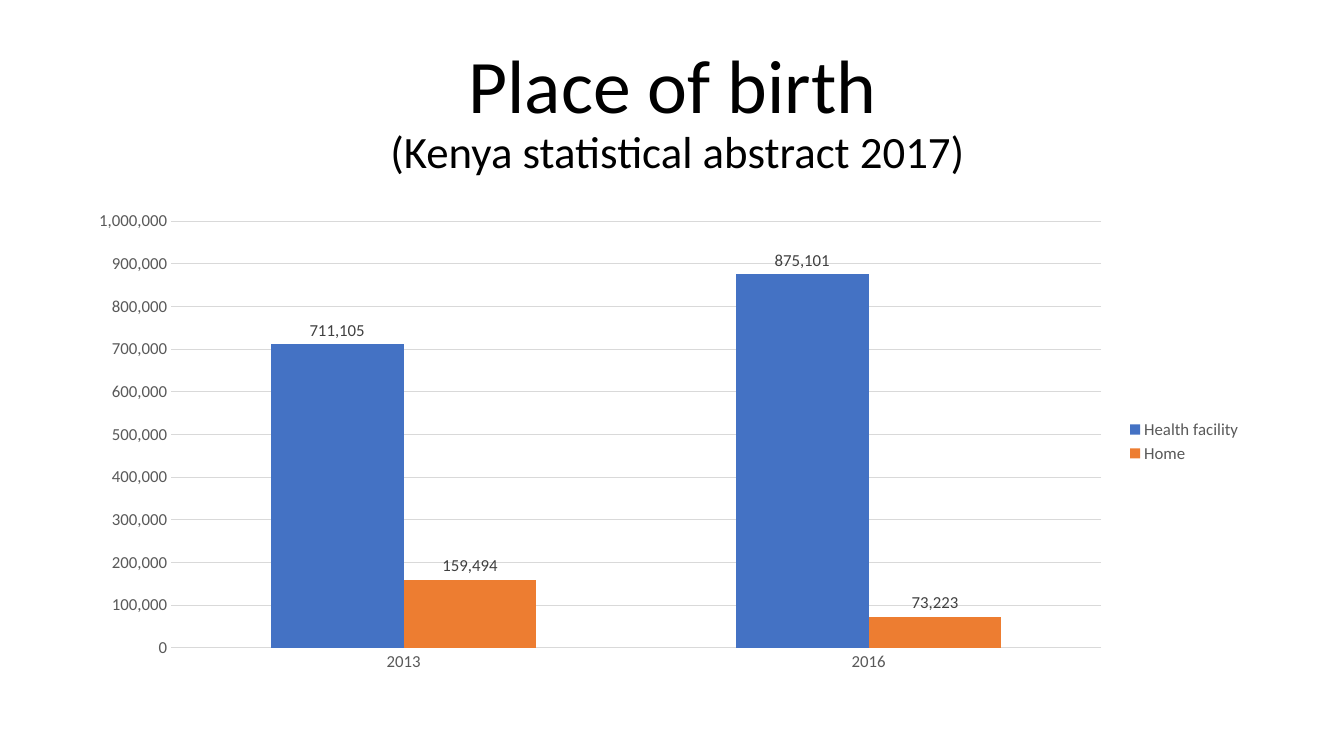
from dataclasses import dataclass

from pptx import Presentation
from pptx.chart.data import CategoryChartData
from pptx.dml.color import RGBColor
from pptx.enum.chart import XL_CHART_TYPE as ChartType
from pptx.enum.chart import XL_LABEL_POSITION as LabelPosition
from pptx.enum.chart import XL_LEGEND_POSITION as LegendPosition
from pptx.enum.chart import XL_TICK_MARK as TickMark
from pptx.enum.text import MSO_ANCHOR as Anchor
from pptx.enum.text import PP_ALIGN as Align
from pptx.util import Inches, Pt

HEADING = "Place of birth"
SOURCE = " (Kenya statistical abstract 2017)"
YEARS = ["2013", "2016"]
BIRTHS = {
    "Health facility": (711105, 875101),
    "Home": (159494, 73223),
}
COUNT_FORMAT = "#,##0"
AXIS_MAX, AXIS_STEP = 1000000, 100000

SLIDE_SIZE = (13.33, 7.5)
TITLE_BOX = (0.92, 0.4, 11.5, 1.45)
CHART_BOX = (0.75, 2, 11.67, 4.76)


@dataclass(frozen=True)
class Theme:
    font: str = "Calibri"
    heading_size: int = 54
    source_size: int = 32
    chart_size: int = 12
    line_width: float = 0.75
    heading: str = "000000"
    axis_text: str = "595959"
    label_text: str = "404040"
    rule: str = "D9D9D9"
    series: tuple = ("4472C4", "ED7D31")


THEME = Theme()


def apply(target, values):
    for name, value in values.items():
        setattr(target, name, value)


def style_font(font, size, color):
    apply(font, {"name": THEME.font, "size": Pt(size), "bold": False})
    font.color.rgb = RGBColor.from_string(color)


def style_rule(line):
    line.width = Pt(THEME.line_width)
    line.color.rgb = RGBColor.from_string(THEME.rule)


def box(bounds):
    return dict(zip(("left", "top", "width", "height"), map(Inches, bounds)))


def fill_title(title):
    apply(title, box(TITLE_BOX))
    apply(title.text_frame, {"vertical_anchor": Anchor.MIDDLE, "word_wrap": True})
    paragraph = title.text_frame.paragraphs[0]
    apply(paragraph, {"alignment": Align.CENTER, "line_spacing": 0.9})
    heading = paragraph.add_run()
    paragraph.add_line_break()
    source = paragraph.add_run()
    for run, text, size in ((heading, HEADING, THEME.heading_size),
                            (source, SOURCE, THEME.source_size)):
        run.text = text
        style_font(run.font, size, THEME.heading)


def style_axes(chart):
    years, counts = chart.category_axis, chart.value_axis
    for axis in (years, counts):
        apply(axis, {"major_tick_mark": TickMark.NONE,
                     "minor_tick_mark": TickMark.NONE})
        style_font(axis.tick_labels.font, THEME.chart_size, THEME.axis_text)
    style_rule(years.format.line)
    apply(counts, {"minimum_scale": 0, "maximum_scale": AXIS_MAX,
                   "major_unit": AXIS_STEP, "has_major_gridlines": True})
    style_rule(counts.major_gridlines.format.line)
    counts.format.line.fill.background()
    apply(counts.tick_labels, {"number_format": COUNT_FORMAT,
                               "number_format_is_linked": False})


def style_columns(plot):
    apply(plot, {"gap_width": 150, "overlap": 0, "vary_by_categories": False})
    for place, color in zip(plot.series, THEME.series):
        place.invert_if_negative = False
        place.format.fill.solid()
        place.format.fill.fore_color.rgb = RGBColor.from_string(color)
        labels = place.data_labels
        apply(labels, {"show_value": True, "position": LabelPosition.OUTSIDE_END,
                       "number_format": COUNT_FORMAT,
                       "number_format_is_linked": False})
        style_font(labels.font, THEME.chart_size, THEME.label_text)


def add_births_chart(slide):
    births = CategoryChartData(number_format=COUNT_FORMAT)
    births.categories = YEARS
    for place, counts in BIRTHS.items():
        births.add_series(place, counts)
    chart = slide.shapes.add_chart(
        ChartType.COLUMN_CLUSTERED, *box(CHART_BOX).values(), births).chart
    style_font(chart.font, THEME.chart_size, THEME.axis_text)
    apply(chart, {"has_title": False, "has_legend": True})
    apply(chart.legend, {"position": LegendPosition.RIGHT,
                         "include_in_layout": False})
    style_font(chart.legend.font, THEME.chart_size, THEME.axis_text)
    style_axes(chart)
    style_columns(chart.plots[0])


def main():
    deck = Presentation()
    deck.slide_width, deck.slide_height = map(Inches, SLIDE_SIZE)
    slide = deck.slides.add_slide(deck.slide_layouts.get_by_name("Title Only"))
    fill_title(slide.shapes.title)
    add_births_chart(slide)
    deck.save("out.pptx")


if __name__ == "__main__":
    main()
